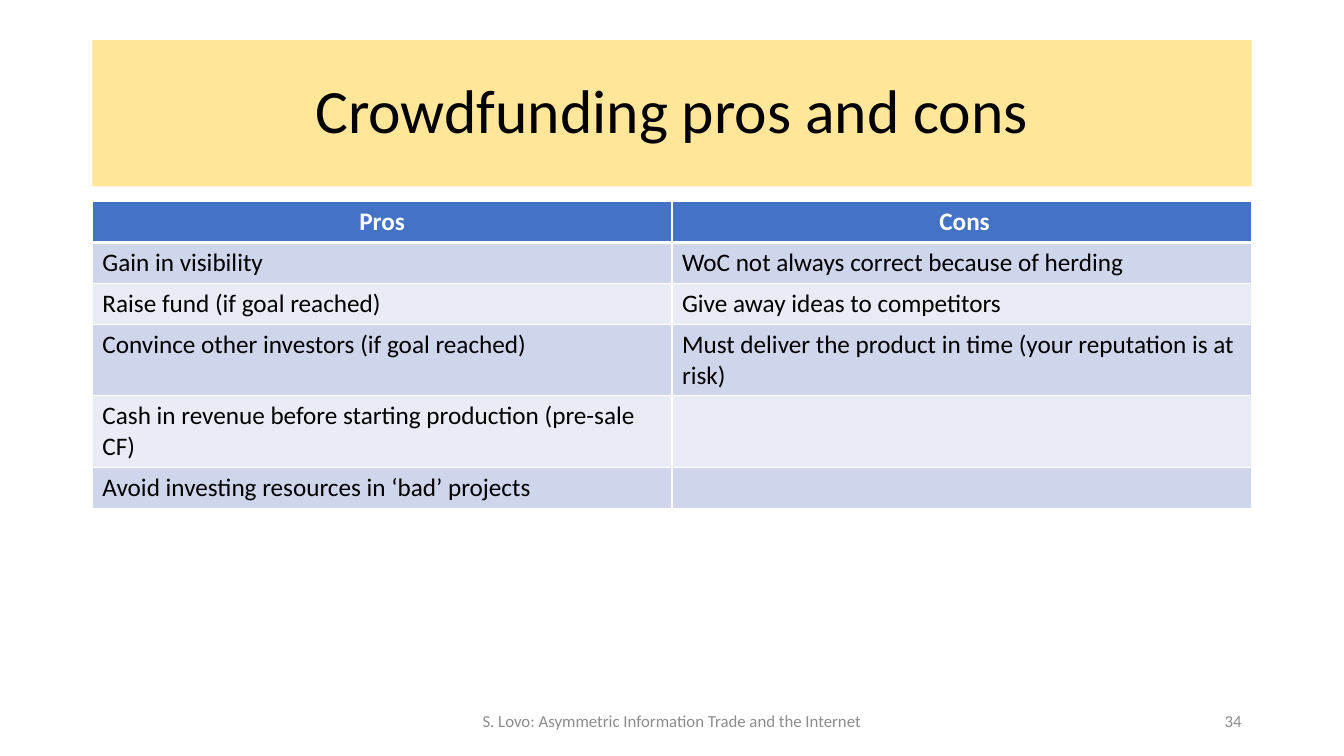
from lxml.etree import SubElement
from pptx import Presentation
from pptx.dml.color import RGBColor
from pptx.enum.text import MSO_ANCHOR, PP_ALIGN
from pptx.oxml.ns import qn
from pptx.util import Pt

COLORS = {
    "banner": "FFE699",
    "header": "4472C4",
    "band_dark": "CFD5EA",
    "band_light": "E9EBF5",
    "white": "FFFFFF",
    "black": "000000",
    "footer": "8C8C8C",
}
FONT = "Calibri"
LEFT, WIDTH = 66, 828
ROW_HEIGHT = 29.2

PROS_AND_CONS = [
    ("Pros", " Cons"),
    ("Gain in visibility", "WoC not always correct because of herding"),
    ("Raise fund (if goal reached)", "Give away ideas to competitors"),
    ("Convince other investors (if goal reached)",
     "Must deliver the product in time (your reputation is at risk)"),
    ("Cash in revenue before starting production (pre-sale CF)", ""),
    ("Avoid investing resources in ‘bad’ projects", ""),
]


def rgb(name):
    return RGBColor.from_string(COLORS[name])


def write(frame, text, size=18, color="black", bold=False,
          align=PP_ALIGN.LEFT, anchor=MSO_ANCHOR.TOP, spacing=1.0):
    frame.word_wrap = True
    frame.vertical_anchor = anchor
    paragraph = frame.paragraphs[0]
    paragraph.alignment = align
    paragraph.line_spacing = spacing
    if not text:
        paragraph.font.size = Pt(size)
        return
    run = paragraph.add_run()
    run.text = text
    run.font.name = FONT
    run.font.size = Pt(size)
    run.font.bold = bold
    run.font.color.rgb = rgb(color)


def add_title(slide, text):
    title = slide.shapes.title
    title.left, title.top = Pt(LEFT), Pt(28.75)
    title.width, title.height = Pt(WIDTH), Pt(104.4)
    title.fill.solid()
    title.fill.fore_color.rgb = rgb("banner")
    write(title.text_frame, text, size=44, align=PP_ALIGN.CENTER,
          anchor=MSO_ANCHOR.MIDDLE, spacing=0.9)


def set_borders(cell, top, bottom):
    properties = cell._tc.get_or_add_tcPr()
    for side, width in (("L", 1), ("R", 1), ("T", top), ("B", bottom)):
        line = SubElement(properties, qn(f"a:ln{side}"), w=str(Pt(width)))
        fill = SubElement(line, qn("a:solidFill"))
        SubElement(fill, qn("a:srgbClr"), val=COLORS["white"])


def add_comparison(slide, rows):
    table = slide.shapes.add_table(
        len(rows), 2, Pt(LEFT), Pt(144), Pt(WIDTH), Pt(ROW_HEIGHT * len(rows))).table
    for row, entries in enumerate(rows):
        table.rows[row].height = Pt(ROW_HEIGHT)
        is_header = row == 0
        band = "header" if is_header else ("band_light", "band_dark")[row % 2]
        for column, entry in enumerate(entries):
            cell = table.cell(row, column)
            # Borders come before the fill in the cell properties
            set_borders(cell, top=3 if row == 1 else 1, bottom=3 if is_header else 1)
            cell.fill.solid()
            cell.fill.fore_color.rgb = rgb(band)
            write(cell.text_frame, entry, bold=is_header,
                  color="white" if is_header else "black",
                  align=PP_ALIGN.CENTER if is_header else PP_ALIGN.LEFT)


def add_footer(slide, text, left, width, align):
    footer = slide.shapes.add_textbox(Pt(left), Pt(500.5), Pt(width), Pt(28.75))
    write(footer.text_frame, text, size=12, color="footer",
          align=align, anchor=MSO_ANCHOR.MIDDLE)


def main():
    deck = Presentation()
    deck.slide_width, deck.slide_height = Pt(960), Pt(540)
    slide = deck.slides.add_slide(deck.slide_layouts[5])

    # Title banner
    add_title(slide, "Crowdfunding pros and cons")

    # Pros and cons table
    add_comparison(slide, PROS_AND_CONS)

    # Footer and page number
    add_footer(slide, "S. Lovo: Asymmetric Information Trade and the Internet",
               318, 324, PP_ALIGN.CENTER)
    add_footer(slide, "34", 678, 216, PP_ALIGN.RIGHT)

    deck.save("out.pptx")


if __name__ == "__main__":
    main()
